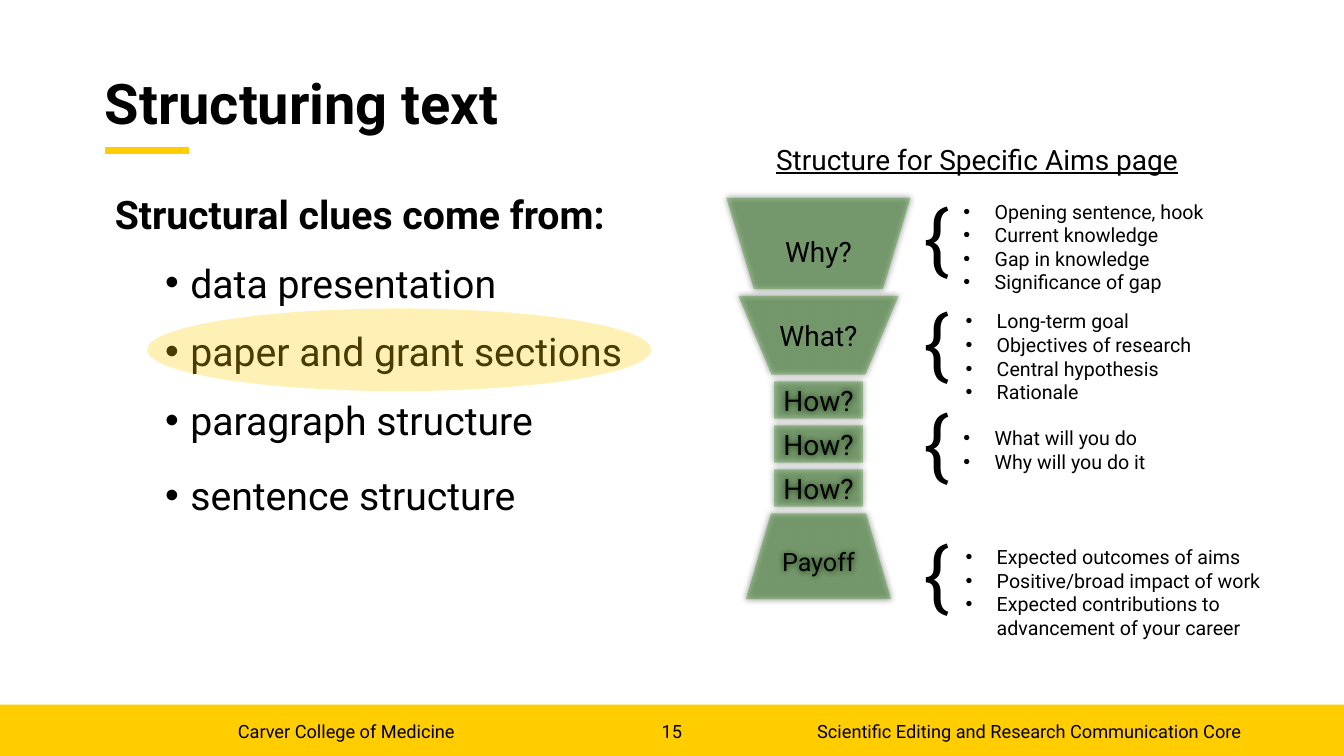
from pptx import Presentation
from pptx.dml.color import RGBColor
from pptx.enum.shapes import MSO_CONNECTOR, MSO_SHAPE
from pptx.enum.text import MSO_ANCHOR, MSO_AUTO_SIZE, PP_ALIGN
from pptx.oxml import parse_xml
from pptx.oxml.ns import nsdecls, qn
from pptx.oxml.xmlchemy import OxmlElement
from pptx.util import Inches, Pt

LEFT, CENTER, RIGHT = PP_ALIGN.LEFT, PP_ALIGN.CENTER, PP_ALIGN.RIGHT
TOP, MIDDLE = MSO_ANCHOR.TOP, MSO_ANCHOR.MIDDLE
RECT, OVAL, TRAPEZOID = MSO_SHAPE.RECTANGLE, MSO_SHAPE.OVAL, MSO_SHAPE.TRAPEZOID
GOLD, GREEN, BLACK = "FFCD00", "3C9527", "000000"
FONT = "Roboto"

# The page is a grid of 40 columns by 22.5 rows of square cells
COLUMNS, ROWS = 40, 22.5
CELL = Inches(13.333) / COLUMNS

FUNNEL = [  # label, width, height, trapezoid inset, upside down, label drop
    ("Why?", 5.49, 2.73, 0.302, True, 0.25),
    ("What?", 4.77, 2.34, 0.422, True, 0),
    ("How?", 2.64, 1.11, None, False, 0),
    ("How?", 2.64, 1.11, None, False, 0),
    ("How?", 2.64, 1.11, None, False, 0),
    ("Payoff", 4.32, 2.55, 0.292, False, 0),
]
NOTES = [  # brace row, text column, text row, lines
    (1.95, 6.78, 1.8, ["Opening sentence, hook", "Current knowledge",
                       "Gap in knowledge", "Significance of gap"]),
    (5.07, 6.84, 5.07, ["Long-term goal", "Objectives of research",
                        "Central hypothesis", "Rationale"]),
    (8.07, 6.78, 8.55, ["What will you do", "Why will you do it"]),
    (11.97, 6.84, 12.09, ["Expected outcomes of aims",
                          "Positive/broad impact of work",
                          "Expected contributions to advancement of your career"]),
]
CLUES = ["data presentation", "paper and grant sections",
         "paragraph structure", "sentence structure"]


def color(code):
    return RGBColor.from_string(code)


def cells(*lengths):
    return [round(length * CELL) for length in lengths]


def inside(box, column, row, width, height):
    """Place a part by its offset from the corner of a box."""
    return box[0] + column, box[1] + row, width, height


def add_shape(page, kind, box, fill, opacity=None):
    shape = page.shapes.add_shape(kind, *cells(*box))
    shape.shadow.inherit = False
    shape.line.fill.background()
    shape.fill.solid()
    shape.fill.fore_color.rgb = color(fill)
    if opacity is not None:
        alpha = OxmlElement("a:alpha")
        alpha.set("val", str(opacity * 1000))
        shape.fill._xPr.find(qn("a:solidFill"))[0].append(alpha)
    return shape


def add_glow(shape):
    properties = shape._element.spPr
    properties.remove(properties.find(qn("a:effectLst")))
    properties.append(parse_xml(
        f'<a:effectLst {nsdecls("a")}><a:outerShdw blurRad="{Pt(5)}" dist="0" dir="0" '
        f'algn="ctr" rotWithShape="0"><a:srgbClr val="{BLACK}"><a:alpha val="40000"/>'
        '</a:srgbClr></a:outerShdw></a:effectLst>'))


def add_span(para, text, size, bold=False, underline=False):
    span = para.add_run()
    span.text = text
    span.font.name, span.font.size = FONT, Pt(size)
    span.font.color.rgb = color(BLACK)
    span.font.bold, span.font.underline = bold, underline


def add_box(page, box, anchor=TOP, inset=None, wrap=True, grow=False):
    holder = page.shapes.add_textbox(*cells(*box))
    frame = holder.text_frame
    frame.word_wrap, frame.vertical_anchor = wrap, anchor
    frame.auto_size = MSO_AUTO_SIZE.SHAPE_TO_FIT_TEXT if grow else MSO_AUTO_SIZE.NONE
    if inset is not None:
        frame.margin_left = frame.margin_right = Inches(inset)
        frame.margin_top = frame.margin_bottom = Inches(inset)
    return holder


def add_line(frame, text, size, align=LEFT, spacing=None, **style):
    para = frame.paragraphs[0]
    para.alignment = align
    if spacing:
        para.line_spacing = spacing
    add_span(para, text, size, **style)


def add_bullet(para, margin, hang):
    properties = para._p.get_or_add_pPr()
    properties.set("marL", str(Inches(margin)))
    properties.set("indent", str(-Inches(hang)))
    for tag, name, value in (("a:buFont", "typeface", "Arial"), ("a:buChar", "char", "•")):
        mark = OxmlElement(tag)
        mark.set(name, value)
        properties.append(mark)


def draw_footer(page, box):
    add_shape(page, RECT, box, GOLD)
    for text, place, align, anchor, wrap in (
            ("15", (19.02, 0.48, 1.95, 0.78), CENTER, TOP, True),
            ("Carver College of Medicine", (7.08, 0.48, 9.48, 1.05), LEFT, TOP, False),
            ("Scientific Editing and Research Communication Core",
             (21.57, 0.18, 15.36, 1.2), RIGHT, MIDDLE, True)):
        holder = add_box(page, inside(box, *place), anchor, 0, wrap)
        add_line(holder.text_frame, text, 13, align)


def draw_title(page, box):
    left, top, right = cells(box[0], box[1] + 2.73, box[0] + 2.52)
    rule = page.shapes.add_connector(MSO_CONNECTOR.STRAIGHT, left, top, right, top)
    rule.line.color.rgb, rule.line.width = color(GOLD), Pt(5)
    rule._element.spPr.append(OxmlElement("a:effectLst"))
    holder = add_box(page, box, MIDDLE, 0)
    add_line(holder.text_frame, "Structuring text", 40, spacing=0.9, bold=True)


def draw_clues(page, box):
    frame = add_box(page, box).text_frame
    add_line(frame, "Structural clues come from:", 28, bold=True)
    frame.paragraphs[0].space_after = Pt(12)
    for clue in CLUES:
        last = clue == CLUES[-1]
        para = frame.add_paragraph()
        para.level, para.line_spacing = 1, 1.1
        para.space_before, para.space_after = Pt(5 if last else 0), Pt(0 if last else 12)
        add_bullet(para, 0.75, 0.25)
        add_span(para, clue, 28)
    # Highlight over the second clue
    add_shape(page, OVAL, inside(box, 1.26, 3.66, 15, 2.46), GOLD, 29)


def draw_funnel(page, box):
    axis, row, gap = 2.76, 1.89, 0.2
    for label, width, height, inset, upside_down, drop in FUNNEL:
        place = inside(box, axis - width / 2, row, width, height)
        block = add_shape(page, TRAPEZOID if inset else RECT, place, GREEN, 40)
        add_glow(block)
        if inset:
            block.adjustments[0] = inset
        holder = block
        if upside_down:
            block._element.spPr.find(qn("a:xfrm")).set("flipV", "1")
            label_row = row + (height - 1.32) / 2 + drop
            holder = add_box(page, inside(box, axis - 1.47, label_row, 2.94, 1.32),
                             wrap=False, grow=True)
        else:
            holder.text_frame.vertical_anchor = MIDDLE
            holder.text_frame.word_wrap = bool(inset)
        add_line(holder.text_frame, label, 18 if label == "Payoff" else 20, CENTER)
        row += height + gap


def draw_notes(page, box):
    for brace_row, column, row, lines in NOTES:
        brace = add_box(page, inside(box, 4.92, brace_row, 2.04, 3.03),
                        wrap=False, grow=True)
        brace.rotation = 180
        add_line(brace.text_frame, "}", 54)
        height = 0.3 + 0.7 * max(len(lines), 2)
        frame = add_box(page, inside(box, column, row, 10.05, height), grow=True).text_frame
        for index, text in enumerate(lines):
            para = frame.add_paragraph() if index else frame.paragraphs[0]
            add_bullet(para, 0.31, 0.31)
            add_span(para, text, 14)


def draw_aims(page, box):
    heading = add_box(page, inside(box, 1.2, 0, 12.96, 1.38), grow=True)
    add_line(heading.text_frame, "Structure for Specific Aims page", 20,
             spacing=1.1, underline=True)
    draw_funnel(page, box)
    draw_notes(page, box)


def main():
    deck = Presentation()
    deck.slide_width, deck.slide_height = cells(COLUMNS, ROWS)
    page = deck.slides.add_slide(deck.slide_layouts[6])
    draw_footer(page, (0, 20.97, COLUMNS, 1.53))
    draw_title(page, (3.12, 1.74, 33.75, 2.85))
    draw_clues(page, (3.12, 5.52, 33.81, 13.98))
    draw_aims(page, (21.6, 3.99, 17, 15.2))
    deck.save("out.pptx")


if __name__ == "__main__":
    main()
